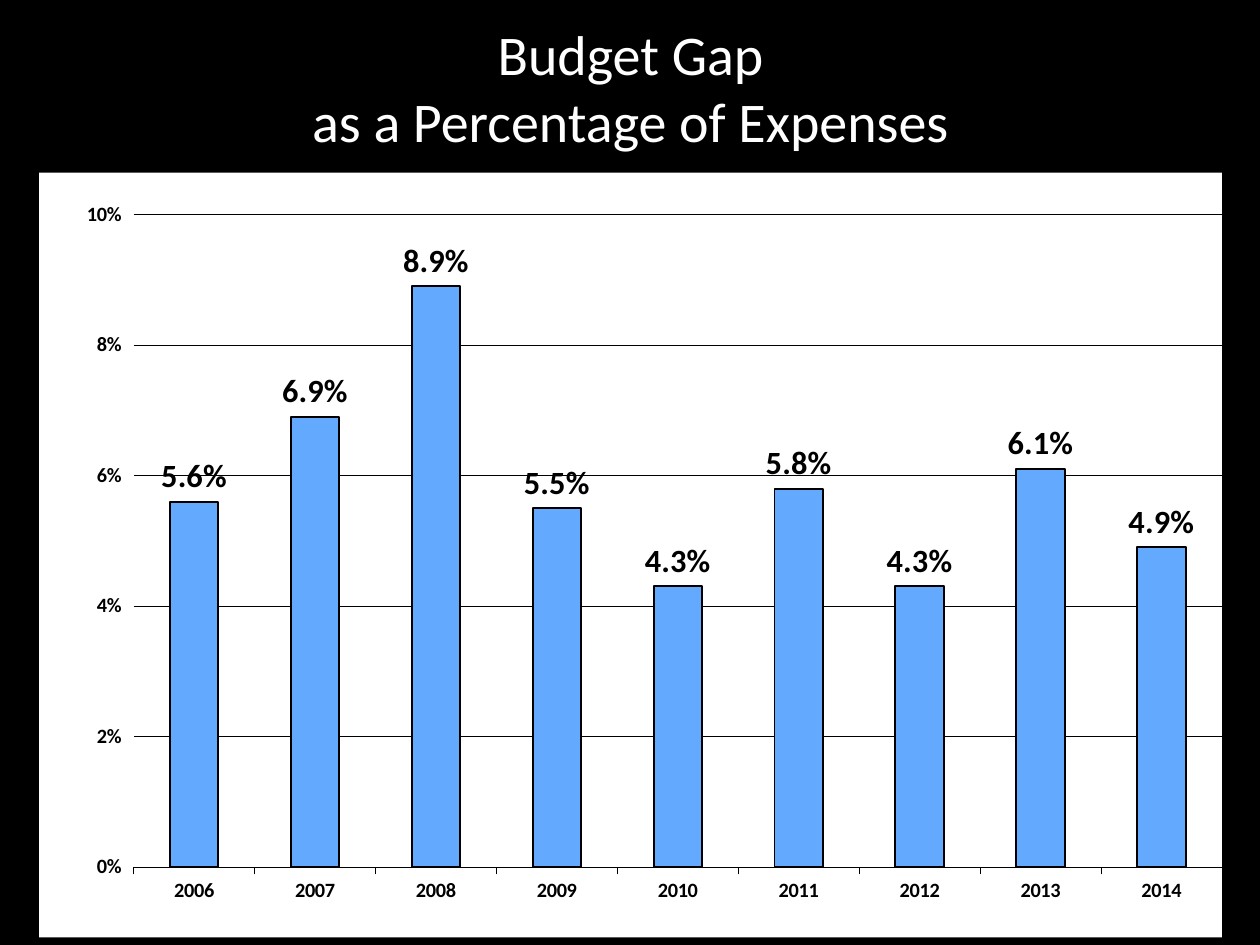
"""Build the budget gap slide with its column chart."""
import pptx
import pptx.chart.data
import pptx.dml.color
import pptx.enum.chart
import pptx.enum.text
import pptx.oxml
import pptx.oxml.ns
import pptx.util
from pptx.util import Inches

BLACK = pptx.dml.color.RGBColor(0x00, 0x00, 0x00)
WHITE = pptx.dml.color.RGBColor(0xFF, 0xFF, 0xFF)
BLUE = pptx.dml.color.RGBColor(0x63, 0xAA, 0xFE)
FONT = "Calibri"
GAPS = {
    "2006": 0.056, "2007": 0.069, "2008": 0.089,
    "2009": 0.055, "2010": 0.043, "2011": 0.058,
    "2012": 0.043, "2013": 0.061, "2014": 0.049,
}


def add_text(page, text, *, left, top, width, height, size, color):
    box = page.shapes.add_textbox(Inches(left), Inches(top), Inches(width), Inches(height))
    frame = box.text_frame
    frame.word_wrap = True
    frame.vertical_anchor = pptx.enum.text.MSO_ANCHOR.BOTTOM
    frame.margin_left = frame.margin_right = Inches(0.03)
    frame.margin_top = frame.margin_bottom = Inches(0.03)
    para = frame.paragraphs[0]
    para.text = text
    para.alignment = pptx.enum.text.PP_ALIGN.CENTER
    for span in para.runs:
        span.font.name = FONT
        span.font.size = pptx.util.Pt(size)
        span.font.color.rgb = color


def style_font(font, size):
    font.name = FONT
    font.size = pptx.util.Pt(size)
    font.bold = True
    font.color.rgb = BLACK


deck = pptx.Presentation()
deck.slide_width = Inches(10)
deck.slide_height = Inches(7.5)
page = deck.slides.add_slide(deck.slide_layouts[6])
page.background.fill.solid()
page.background.fill.fore_color.rgb = BLACK

add_text(page, "Budget Gap\vas a Percentage of Expenses",
         left=0.98, top=0.17, width=8.05, height=1.08, size=32, color=WHITE)

chart_data = pptx.chart.data.CategoryChartData(number_format="0.0%")
chart_data.categories = list(GAPS)
chart_data.add_series("Budget Gap", list(GAPS.values()))
chart = page.shapes.add_chart(
    pptx.enum.chart.XL_CHART_TYPE.COLUMN_CLUSTERED,
    Inches(0.31), Inches(1.37), Inches(9.39), Inches(6.07), chart_data).chart
chart.has_legend = False
chart.has_title = False
style_font(chart.font, 18.5)

plot = chart.plots[0]
plot.gap_width = 150
plot.vary_by_categories = False
plot.has_data_labels = True
labels = plot.data_labels
labels.show_value = True
labels.number_format = "0.0%"
labels.number_format_is_linked = False
labels.position = pptx.enum.chart.XL_LABEL_POSITION.OUTSIDE_END
style_font(labels.font, 18.5)

bars = plot.series[0].format
bars.fill.solid()
bars.fill.fore_color.rgb = BLUE
bars.line.color.rgb = BLACK
bars.line.width = pptx.util.Pt(1.14)

years, percents = chart.category_axis, chart.value_axis
for axis in (years, percents):
    axis.major_tick_mark = pptx.enum.chart.XL_TICK_MARK.OUTSIDE
    style_font(axis.tick_labels.font, 11.6)
percents.minimum_scale = 0
percents.maximum_scale = 0.1
percents.major_unit = 0.02
percents.tick_labels.number_format = "0%"
percents.tick_labels.number_format_is_linked = False
percents.format.line.fill.background()
percents.has_major_gridlines = True
for line in (years.format.line, percents.major_gridlines.format.line):
    line.color.rgb = BLACK
    line.width = pptx.util.Pt(0.28)

names = pptx.oxml.ns.nsdecls("c", "a")
white_area = (f'<c:spPr {names}><a:solidFill><a:srgbClr val="{WHITE}"/></a:solidFill>'
              '<a:ln><a:noFill/></a:ln></c:spPr>')
plot_area = chart.element.chart.plotArea
for layout in plot_area.findall(pptx.oxml.ns.qn("c:layout")):
    plot_area.remove(layout)
plot_area.insert(0, pptx.oxml.parse_xml(
    f'<c:layout {names}><c:manualLayout><c:layoutTarget val="inner"/>'
    '<c:xMode val="edge"/><c:yMode val="edge"/><c:x val="0.08"/><c:y val="0.055"/>'
    '<c:w val="0.92"/><c:h val="0.853"/></c:manualLayout></c:layout>'))
plot_area.append(pptx.oxml.parse_xml(white_area))
chart.element.chart.addnext(pptx.oxml.parse_xml(white_area))

deck.save("out.pptx")
